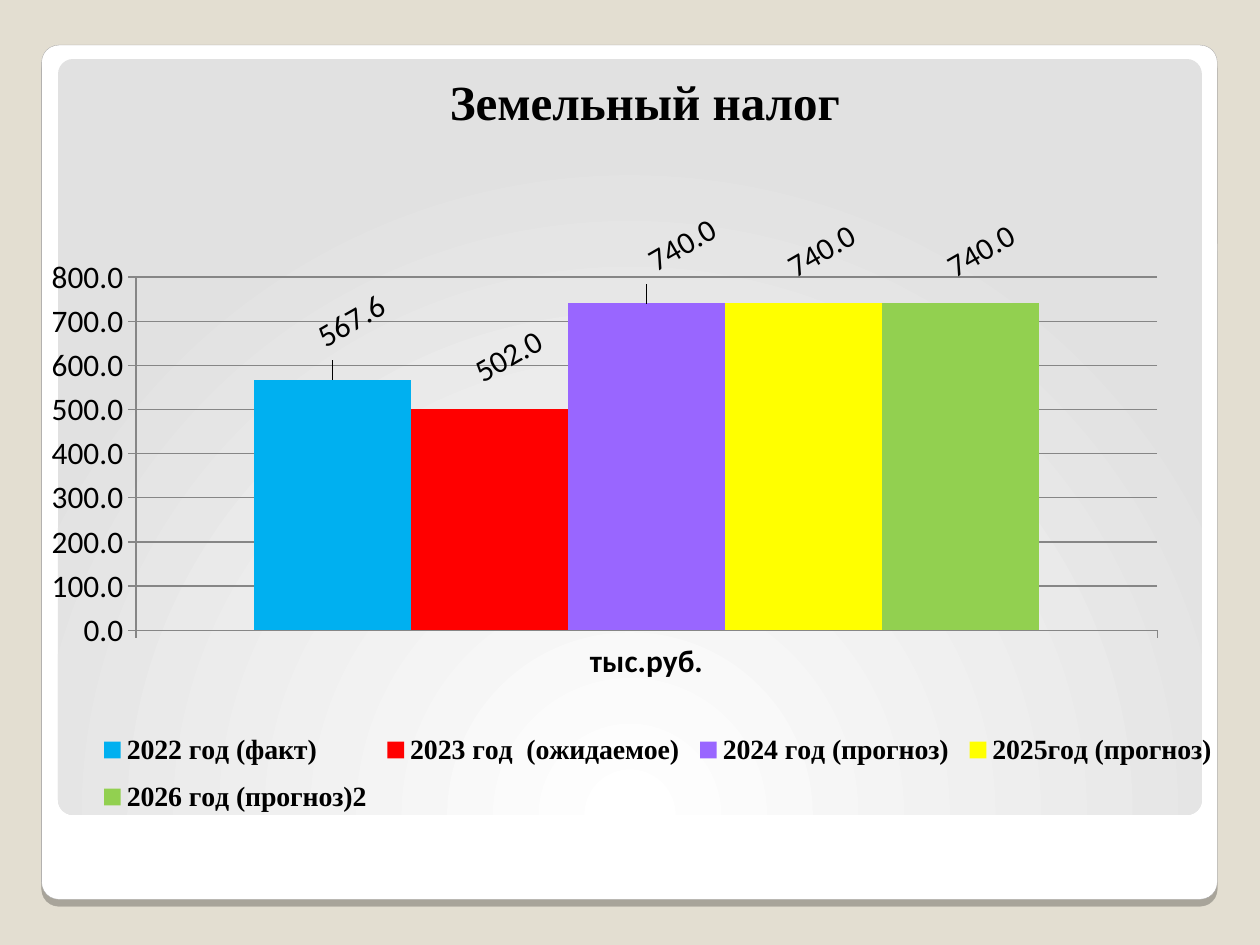
from lxml.etree import SubElement
from pptx import Presentation
from pptx.chart.data import CategoryChartData
from pptx.dml.color import RGBColor
from pptx.enum.chart import XL_CHART_TYPE, XL_LABEL_POSITION, XL_LEGEND_POSITION, XL_TICK_MARK
from pptx.enum.shapes import MSO_SHAPE
from pptx.enum.text import MSO_ANCHOR, PP_ALIGN
from pptx.oxml import parse_xml
from pptx.oxml.ns import nsdecls, qn
from pptx.util import Cm, Pt

# name, value, colour, label shift as a fraction of the chart's width and height
YEARS = [
    ("2022 год (факт)", 567.6, "00B0F0", (0.016, -0.03)),
    ("2023 год  (ожидаемое)", 502, "FF0000", (0.016, -0.02)),
    ("2024 год (прогноз)", 740, "9966FF", (0.03, -0.03)),
    ("2025год (прогноз)", 740, "FFFF00", (0.015, -0.02)),
    ("2026 год (прогноз)2", 740, "92D050", (0.017, -0.02)),
]


def rgb(hex_colour):
    return RGBColor.from_string(hex_colour)


def manual_layout(inner=False, edge=True, **places):
    """Return a c:layout; places are x, y, w, h as fractions of the chart."""
    layout = parse_xml(f"<c:layout {nsdecls('c')}><c:manualLayout/></c:layout>")
    entries = [("layoutTarget", "inner")] if inner else []
    if edge:
        entries += [("xMode", "edge"), ("yMode", "edge")]
    for tag, value in entries + list(places.items()):
        SubElement(layout[0], qn(f"c:{tag}")).set("val", str(value))
    return layout


class SlideBuilder:
    text_colour = "000000"
    line_colour = "868686"
    heading_font = "Times New Roman"
    body_font = "Calibri"

    def __init__(self, slide):
        self.slide = slide

    def style_font(self, font, size, name, bold=False):
        font.size, font.name, font.bold = Pt(size), name, bold
        font.color.rgb = rgb(self.text_colour)

    def background(self, colour):
        fill = self.slide.background.fill
        fill.solid()
        fill.fore_color.rgb = rgb(colour)

    def rounded_panel(self, left, top, width, height, colour):
        panel = self.slide.shapes.add_shape(
            MSO_SHAPE.ROUNDED_RECTANGLE, Cm(left), Cm(top), Cm(width), Cm(height))
        panel.adjustments[0] = 0.02
        panel.shadow.inherit = False
        panel.fill.solid()
        panel.fill.fore_color.rgb = rgb(colour)
        panel.line.fill.background()
        return panel

    def frame(self, *box):
        frame = self.rounded_panel(*box, "FFFFFF")
        frame.line.color.rgb = rgb("A4A3A3")
        frame.line.width = Pt(0.16)
        frame._element.spPr.find(qn("a:effectLst")).append(parse_xml(
            f'<a:outerShdw {nsdecls("a")} blurRad="0" dist="{Pt(4)}" dir="5400000">'
            '<a:srgbClr val="000000"><a:alpha val="25000"/></a:srgbClr></a:outerShdw>'))

    def glow_panel(self, *box):
        """Add a panel that is lit by a circular gradient from below."""
        properties = self.rounded_panel(*box, "E1E1E1")._element.spPr
        properties.replace(properties.find(qn("a:solidFill")), parse_xml(
            f'<a:gradFill {nsdecls("a")} rotWithShape="1"><a:gsLst>'
            '<a:gs pos="0"><a:srgbClr val="FFFFFF"/></a:gs>'
            '<a:gs pos="100000"><a:srgbClr val="E1E1E1"/></a:gs></a:gsLst>'
            '<a:path path="circle"><a:fillToRect l="50000" t="175000" r="50000" b="-75000"/>'
            '</a:path></a:gradFill>'))

    def title(self, left, top, width, height, text):
        box = self.slide.shapes.add_textbox(Cm(left), Cm(top), Cm(width), Cm(height))
        box.text_frame.word_wrap = True
        box.text_frame.vertical_anchor = MSO_ANCHOR.BOTTOM
        heading = box.text_frame.paragraphs[0]
        heading.text = text
        heading.alignment = PP_ALIGN.CENTER
        self.style_font(heading.runs[0].font, 28, self.heading_font, bold=True)

    def column_chart(self, left, top, width, height, category, years):
        data = CategoryChartData(number_format="0.0")
        data.categories = [category]
        for name, value, *_ in years:
            data.add_series(name, [value])
        chart = self.slide.shapes.add_chart(
            XL_CHART_TYPE.COLUMN_CLUSTERED, Cm(left), Cm(top), Cm(width), Cm(height), data).chart
        chart.has_title = False
        self.style_font(chart.font, 17.9, self.body_font)
        plot = chart.plots[0]
        plot.gap_width, plot.overlap, plot.vary_by_categories = 150, 0, False
        for series, (_, _, colour, shift) in zip(plot.series, years):
            series.format.fill.solid()
            series.format.fill.fore_color.rgb = rgb(colour)
            self.slanted_label(series, shift)
        self.axes(chart)
        self.legend(chart)
        plot_area = chart._chartSpace.chart.plotArea
        for old_layout in plot_area.findall(qn("c:layout")):
            plot_area.remove(old_layout)
        plot_area.insert(0, manual_layout(inner=True, x=0.077, y=0.125, w=0.867, h=0.548))

    def slanted_label(self, series, shift):
        label = series.points[0].data_label
        label.position = XL_LABEL_POSITION.OUTSIDE_END
        self.style_font(label.font, 17.9, self.body_font)
        element = series._element.find(".//" + qn("c:dLbl"))
        element.find(".//" + qn("a:bodyPr")).set("rot", "-1800000")
        element.insert(1, manual_layout(edge=False, x=shift[0], y=shift[1]))

    def axes(self, chart):
        values, categories = chart.value_axis, chart.category_axis
        values.minimum_scale, values.maximum_scale, values.major_unit = 0, 800, 100
        values.tick_labels.number_format = "0.0"
        values.tick_labels.number_format_is_linked = False
        self.style_font(categories.tick_labels.font, 17.9, self.body_font, bold=True)
        for axis in (values, categories):
            axis.major_tick_mark = XL_TICK_MARK.OUTSIDE
            axis.format.line.color.rgb = rgb(self.line_colour)
        values.major_gridlines.format.line.color.rgb = rgb(self.line_colour)

    def legend(self, chart):
        chart.has_legend = True
        legend = chart.legend
        legend.position = XL_LEGEND_POSITION.RIGHT
        legend.include_in_layout = False
        self.style_font(legend.font, 15.9, self.heading_font, bold=True)
        element = legend._element
        for old_layout in element.findall(qn("c:layout")):
            element.remove(old_layout)
        element.insert(1, manual_layout(x=0.04, y=0.81, w=0.96, h=0.17))


def main():
    presentation = Presentation()
    presentation.slide_width, presentation.slide_height = Cm(25.4), Cm(19.05)
    builder = SlideBuilder(presentation.slides.add_slide(presentation.slide_layouts[6]))
    builder.background("E3DED1")
    builder.frame(0.84, 0.91, 23.7, 17.22)
    builder.glow_panel(1.17, 1.19, 23.06, 15.24)
    builder.title(1.19, 0.58, 23.62, 2.18, "Земельный налог")
    builder.column_chart(0.91, 3.96, 23.75, 13, "тыс.руб.", YEARS)
    presentation.save("out.pptx")


if __name__ == "__main__":
    main()
